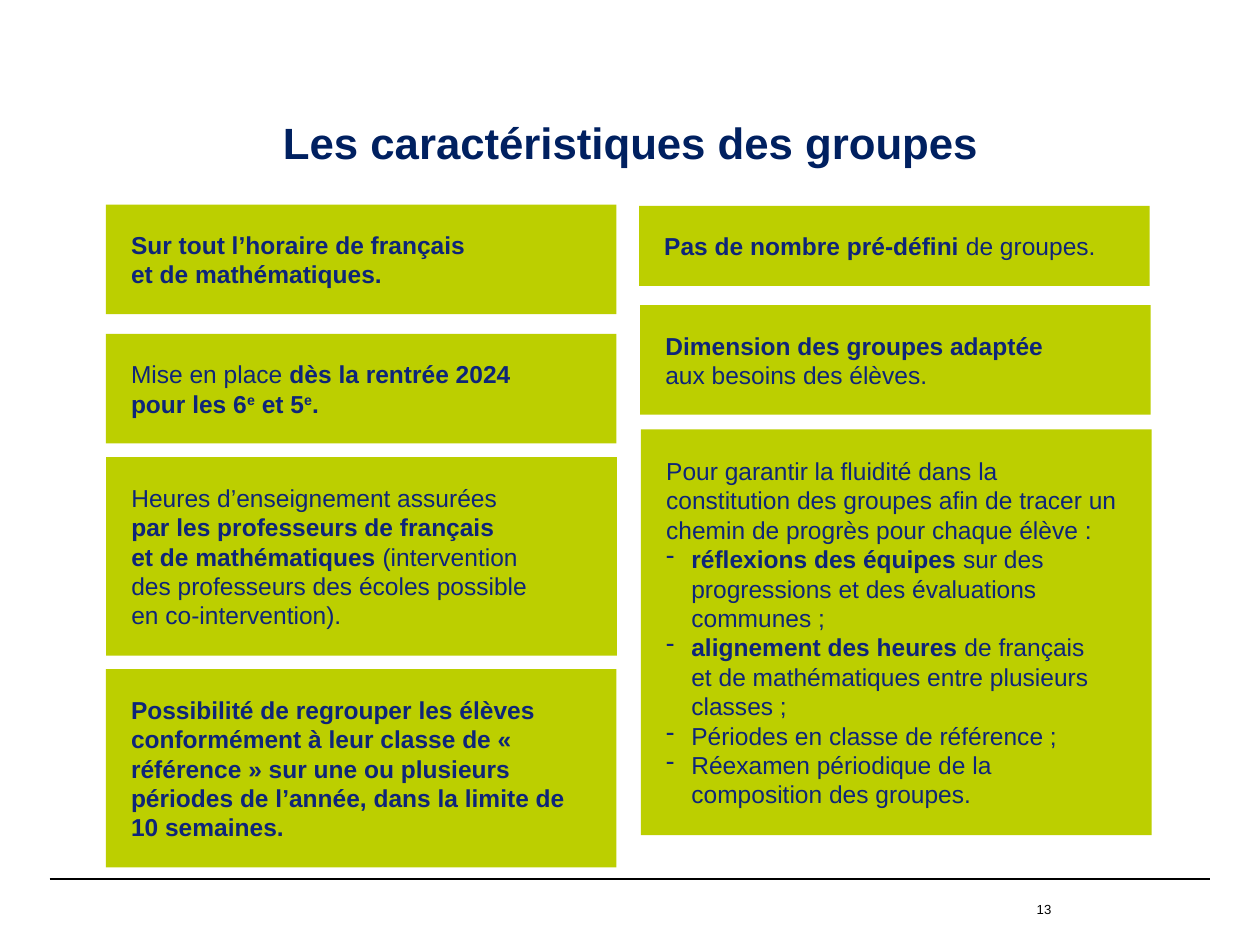
"""Build the slide on the traits of the groups."""
from dataclasses import dataclass

from lxml import etree
from pptx import Presentation
from pptx.dml.color import RGBColor
from pptx.enum.shapes import MSO_CONNECTOR, MSO_SHAPE
from pptx.enum.text import MSO_ANCHOR, MSO_AUTO_SIZE, PP_ALIGN
from pptx.oxml.ns import qn
from pptx.util import Pt

LINE, RECT = MSO_CONNECTOR.STRAIGHT, MSO_SHAPE.RECTANGLE
TOP, MIDDLE = MSO_ANCHOR.TOP, MSO_ANCHOR.MIDDLE
LEFT, CENTER, RIGHT = PP_ALIGN.LEFT, PP_ALIGN.CENTER, PP_ALIGN.RIGHT
NONE, GROW = MSO_AUTO_SIZE.NONE, MSO_AUTO_SIZE.SHAPE_TO_FIT_TEXT
BOLD, SUPER = "bold", "super"


@dataclass(frozen=True)
class Theme:
    """Colours, font and type sizes."""
    font: str = "Arial"
    fill: str = "BCCF00"
    ink: str = "0E2579"
    head: str = "002060"
    black: str = "000000"
    head_size: float = 25
    text_size: float = 14
    foot_size: float = 7.5


class Page:
    """Style and current slide."""

    def __init__(self, slide, theme):
        self.slide, self.theme = slide, theme

    def frame(self, shape, anchor, inset, fit=NONE):
        """Set up a text frame."""
        frame = shape.text_frame
        frame.word_wrap, frame.auto_size = True, fit
        frame.vertical_anchor = anchor
        frame.margin_left = frame.margin_right = Pt(inset[0])
        frame.margin_top = frame.margin_bottom = Pt(inset[1])
        return frame

    def add_runs(self, para, runs, size, ink, align=LEFT):
        """Add runs, with line breaks, to a paragraph."""
        para.alignment = align
        for text, *marks in runs:
            for i, part in enumerate(text.split("\n")):
                if i:
                    para.add_line_break()
                if not part:
                    continue
                run = para.add_run()
                run.text = part
                font = run.font
                font.name, font.size = self.theme.font, Pt(size)
                font.bold = BOLD in marks
                font.color.rgb = RGBColor.from_string(ink)
                if SUPER in marks:
                    run._r.get_or_add_rPr().set("baseline", "30000")

    def dash(self, para, indent=14.4):
        """Give a paragraph a hanging dash."""
        props = para._p.get_or_add_pPr()
        props.set("marL", str(Pt(indent)))
        props.set("indent", str(-Pt(indent)))
        etree.SubElement(props, qn("a:buChar")).set("char", "-")

    def title(self, text, left, top, width, height):
        """Place and format the title."""
        shape = self.slide.shapes.title
        shape.left, shape.top = Pt(left), Pt(top)
        shape.width, shape.height = Pt(width), Pt(height)
        para = self.frame(shape, TOP, (7.2, 3.6)).paragraphs[0]
        para.line_spacing = 0.9
        self.add_runs(para, [(text, BOLD)], self.theme.head_size, self.theme.head, CENTER)

    def card(self, left, top, width, lines, paras):
        """Add a filled card as tall as its lines need."""
        pad, pitch = 14.4, 16.92
        shape = self.slide.shapes.add_shape(
            RECT, Pt(left), Pt(top), Pt(width), Pt(2 * pad + lines * pitch))
        shape.shadow.inherit = False
        shape.fill.solid()
        shape.fill.fore_color.rgb = RGBColor.from_string(self.theme.fill)
        shape.line.fill.background()
        frame = self.frame(shape, MIDDLE, (pad, pad), GROW)
        for i, runs in enumerate(paras):
            para = frame.add_paragraph() if i else frame.paragraphs[0]
            if i:
                self.dash(para)
            self.add_runs(para, runs, self.theme.text_size, self.theme.ink)

    def rule(self, left, right, y):
        """Add the foot rule."""
        line = self.slide.shapes.add_connector(LINE, Pt(left), Pt(y), Pt(right), Pt(y))
        line.line.width = Pt(0.8)
        line.line.color.rgb = RGBColor.from_string(self.theme.black)
        etree.SubElement(line._element.spPr, qn("a:effectLst"))

    def number(self, text, left, top, width, height):
        """Add the page number."""
        box = self.slide.shapes.add_textbox(Pt(left), Pt(top), Pt(width), Pt(height))
        para = self.frame(box, MIDDLE, (0, 0)).paragraphs[0]
        self.add_runs(para, [(text,)], self.theme.foot_size, self.theme.black, RIGHT)


CARDS = [
    (60.5, 116.9, 2, [[("Sur tout l’horaire de français\net de mathématiques.", BOLD)]]),
    (60.5, 190.8, 2, [[
        ("Mise en place ",), ("dès la rentrée 2024 \npour les 6", BOLD),
        ("e", BOLD, SUPER), (" et 5", BOLD), ("e", BOLD, SUPER), (".", BOLD)]]),
    (60.7, 261.2, 5, [[
        ("Heures d’enseignement assurées\n",),
        ("par les professeurs de français\net de mathématiques", BOLD),
        (" (intervention\ndes professeurs des écoles possible\nen co-intervention).",)]]),
    (60.5, 382.3, 5, [[
        ("Possibilité de regrouper les élèves conformément à leur classe de "
         "« référence » sur une ou plusieurs périodes de l’année, "
         "dans la limite de 10 semaines.", BOLD)]]),
    (365.2, 117.6, 1, [[("Pas de nombre pré-défini ", BOLD), ("de groupes.",)]]),
    (365.8, 174.4, 2, [[
        ("Dimension des groupes adaptée \n", BOLD), ("aux besoins des élèves.",)]]),
    (366.3, 245.4, 12, [
        [("Pour garantir la fluidité dans la constitution des groupes "
          "afin de tracer un chemin de progrès pour chaque élève :",)],
        [("réflexions des équipes ", BOLD),
         ("sur des progressions et des évaluations communes ;",)],
        [("alignement des heures ", BOLD),
         ("de français \net de mathématiques entre plusieurs classes ;",)],
        [("Périodes en classe de référence ;",)],
        [("Réexamen périodique de la composition des groupes.",)]]),
]


def main():
    """Build and save the deck."""
    deck = Presentation()
    deck.slide_width, deck.slide_height = Pt(720), Pt(540)
    page = Page(deck.slides.add_slide(deck.slide_layouts[5]), Theme())
    page.rule(28.4, 691.6, 502.3)
    page.title("Les caractéristiques des groupes", 62.4, 66.2, 595.4, 31)
    for left, top, lines, paras in CARDS:
        page.card(left, top, 291.8, lines, paras)
    page.number("13", 494.6, 500.6, 106.2, 37.4)
    deck.save("out.pptx")


if __name__ == "__main__":
    main()
